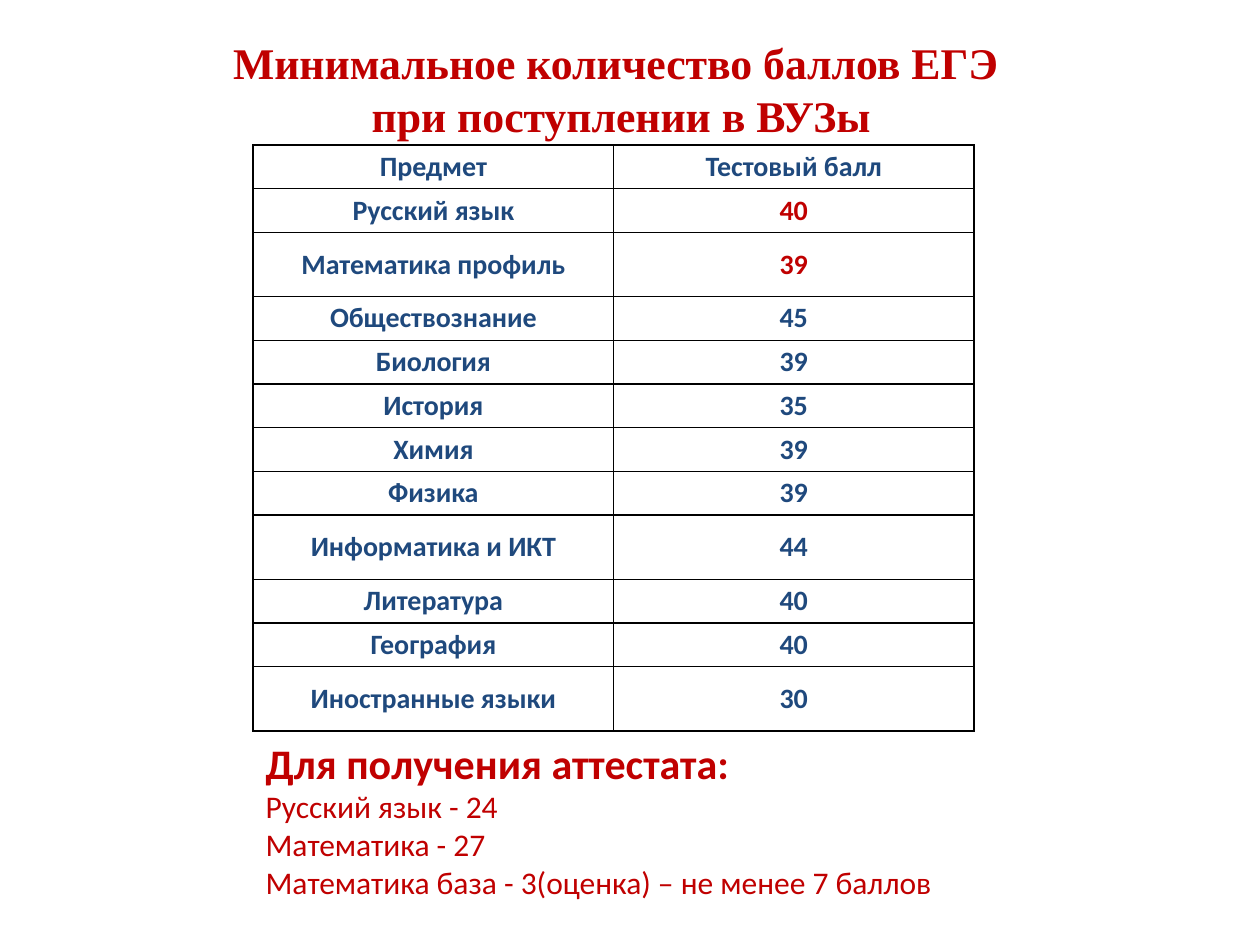
from dataclasses import dataclass

from lxml.etree import SubElement
from pptx import Presentation
from pptx.dml.color import RGBColor
from pptx.enum.text import MSO_ANCHOR, PP_ALIGN
from pptx.oxml.ns import qn
from pptx.util import Inches, Pt


@dataclass(frozen=True)
class Theme:
    accent: str = "C00000"
    table_text: str = "1F497D"
    border: str = "000000"
    title_font: str = "Times New Roman"
    body_font: str = "Calibri"
    title_size: float = 25
    heading_size: float = 24
    note_size: float = 18
    table_size: float = 16
    border_width: float = 1


THEME = Theme()

TITLE = "Минимальное количество баллов ЕГЭ \vпри поступлении в ВУЗы"
HEADER = ("Предмет", "Тестовый балл")
SCORES = [
    ("Русский язык", "40"),
    ("Математика профиль", "39"),
    ("Обществознание", "45"),
    ("Биология", "39"),
    ("История", "35"),
    ("Химия", "39"),
    ("Физика", "39"),
    ("Информатика и ИКТ", "44"),
    ("Литература", "40"),
    ("География", "40"),
    ("Иностранные языки", "30"),
]
REQUIRED_SUBJECTS = {"Русский язык", "Математика профиль"}
TALL_ROWS = {"Математика профиль", "Информатика и ИКТ", "Иностранные языки"}
CERTIFICATE_HEADING = "Для получения аттестата:"
CERTIFICATE_LINES = [
    "Русский язык - 24",
    "Математика - 27",
    "Математика база - 3(оценка) – не менее 7 баллов",
]

# Layout in inches
CONTENT_LEFT = 2.01
COLUMN_WIDTH = 2.86
ROW_HEIGHT, TALL_ROW_HEIGHT = 0.34, 0.51


def format_paragraph(paragraph, font, size, color, bold=False, align=None):
    paragraph.alignment = align
    for run in paragraph.runs:
        run.font.name = font
        run.font.size = Pt(size)
        run.font.bold = bold
        run.font.color.rgb = RGBColor.from_string(color)


def add_title(slide):
    title = slide.shapes.title
    title.left, title.top = Inches(0.43), Inches(0)
    title.width, title.height = Inches(9), Inches(1.12)
    frame = title.text_frame
    frame.vertical_anchor = MSO_ANCHOR.BOTTOM
    frame.margin_bottom = 0
    paragraph = frame.paragraphs[0]
    paragraph.text = TITLE
    format_paragraph(paragraph, THEME.title_font, THEME.title_size,
                     THEME.accent, True, PP_ALIGN.CENTER)


def add_borders(cell):
    properties = cell._tc.get_or_add_tcPr()
    for position, side in enumerate(("lnL", "lnR", "lnT", "lnB")):
        line = SubElement(properties, qn(f"a:{side}"), w=str(Pt(THEME.border_width)))
        fill = SubElement(line, qn("a:solidFill"))
        SubElement(fill, qn("a:srgbClr"), val=THEME.border)
        # Borders come before the fill in the cell's properties
        properties.insert(position, line)


def fill_cell(cell, text, color):
    cell.fill.background()
    add_borders(cell)
    cell.vertical_anchor = MSO_ANCHOR.MIDDLE
    cell.margin_left = cell.margin_right = Pt(5.4)
    cell.margin_top = cell.margin_bottom = Pt(2.7)
    paragraph = cell.text_frame.paragraphs[0]
    paragraph.text = text
    format_paragraph(paragraph, THEME.body_font, THEME.table_size,
                     color, True, PP_ALIGN.CENTER)


def add_score_table(slide):
    rows = [HEADER, *SCORES]
    heights = [TALL_ROW_HEIGHT if subject in TALL_ROWS else ROW_HEIGHT
               for subject, _ in rows]
    table = slide.shapes.add_table(
        len(rows), len(HEADER), Inches(CONTENT_LEFT), Inches(1.15),
        Inches(COLUMN_WIDTH * len(HEADER)), Inches(sum(heights))).table
    table.first_row = table.horz_banding = False
    for column in table.columns:
        column.width = Inches(COLUMN_WIDTH)
    for index, (subject, score) in enumerate(rows):
        table.rows[index].height = Inches(heights[index])
        score_color = THEME.accent if subject in REQUIRED_SUBJECTS else THEME.table_text
        fill_cell(table.cell(index, 0), subject, THEME.table_text)
        fill_cell(table.cell(index, 1), score, score_color)


def add_certificate_note(slide):
    box = slide.shapes.add_textbox(Inches(CONTENT_LEFT), Inches(5.8),
                                   Inches(5.83), Inches(1.41))
    frame = box.text_frame
    frame.word_wrap = True
    frame.text = "\n".join([CERTIFICATE_HEADING, *CERTIFICATE_LINES])
    heading, *lines = frame.paragraphs
    format_paragraph(heading, THEME.body_font, THEME.heading_size, THEME.accent, True)
    for line in lines:
        format_paragraph(line, THEME.body_font, THEME.note_size, THEME.accent)


def main():
    presentation = Presentation()
    presentation.slide_width, presentation.slide_height = Inches(10), Inches(7.5)
    title_only = presentation.slide_layouts[5]
    slide = presentation.slides.add_slide(title_only)
    add_title(slide)
    add_score_table(slide)
    add_certificate_note(slide)
    presentation.save("out.pptx")


if __name__ == "__main__":
    main()
